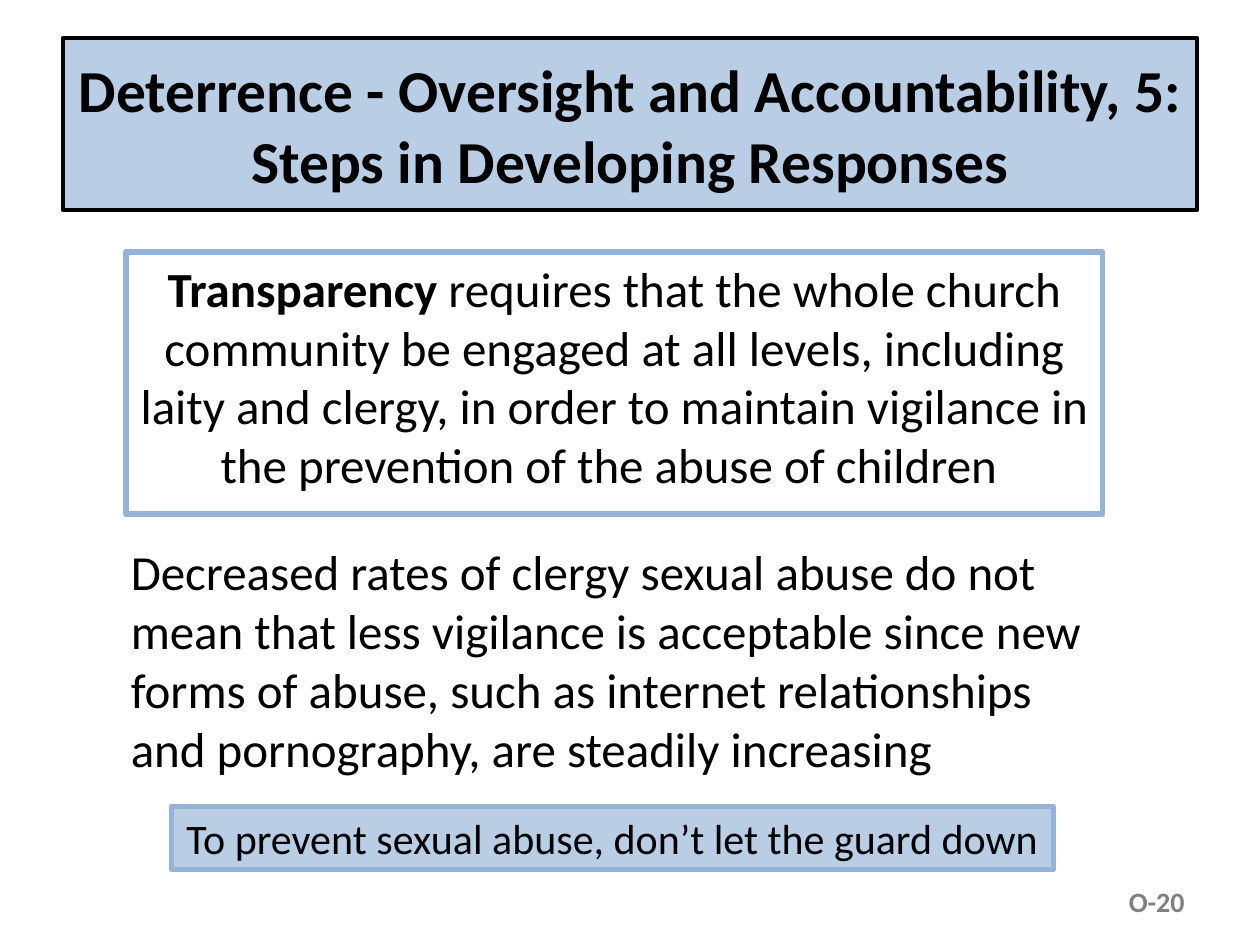
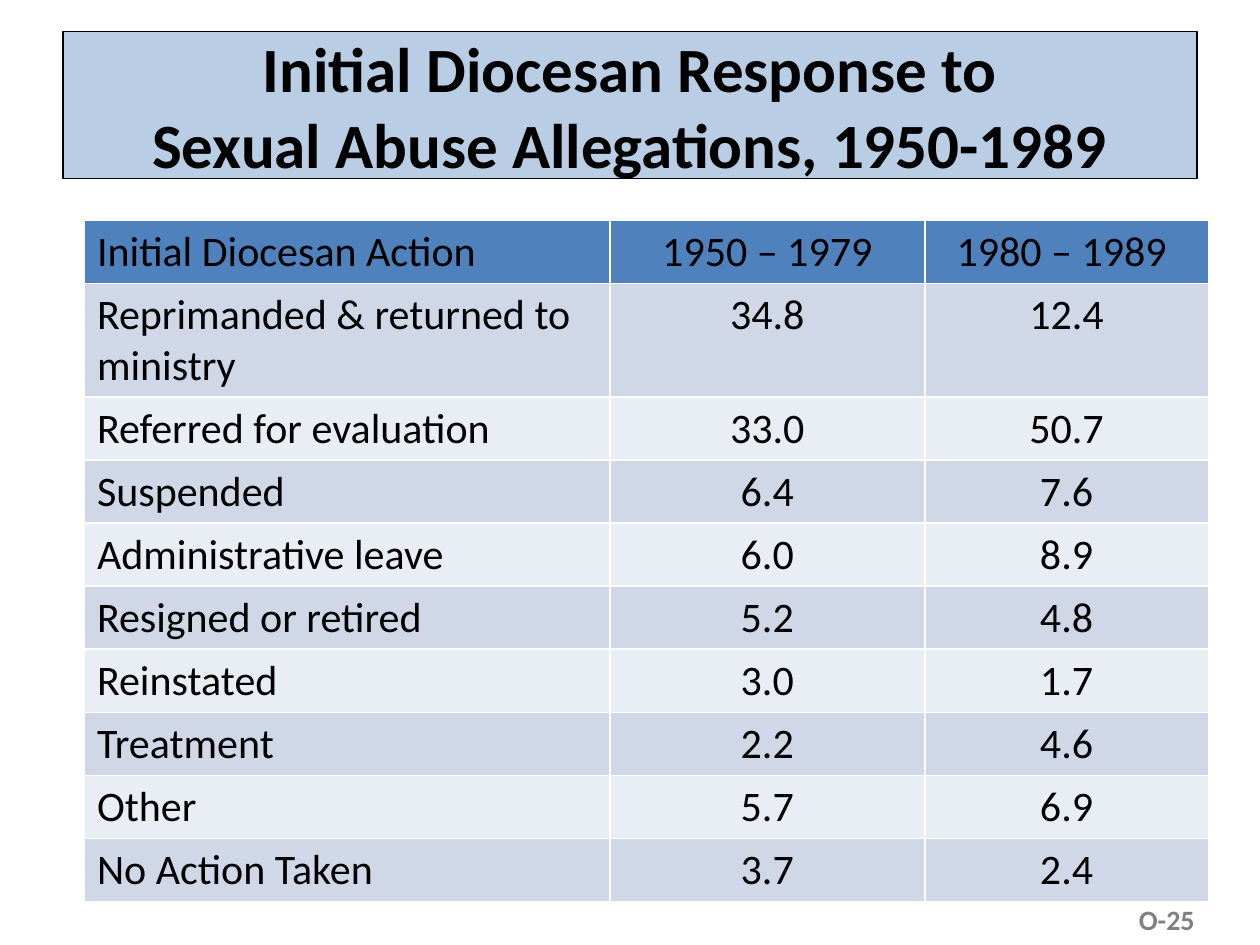
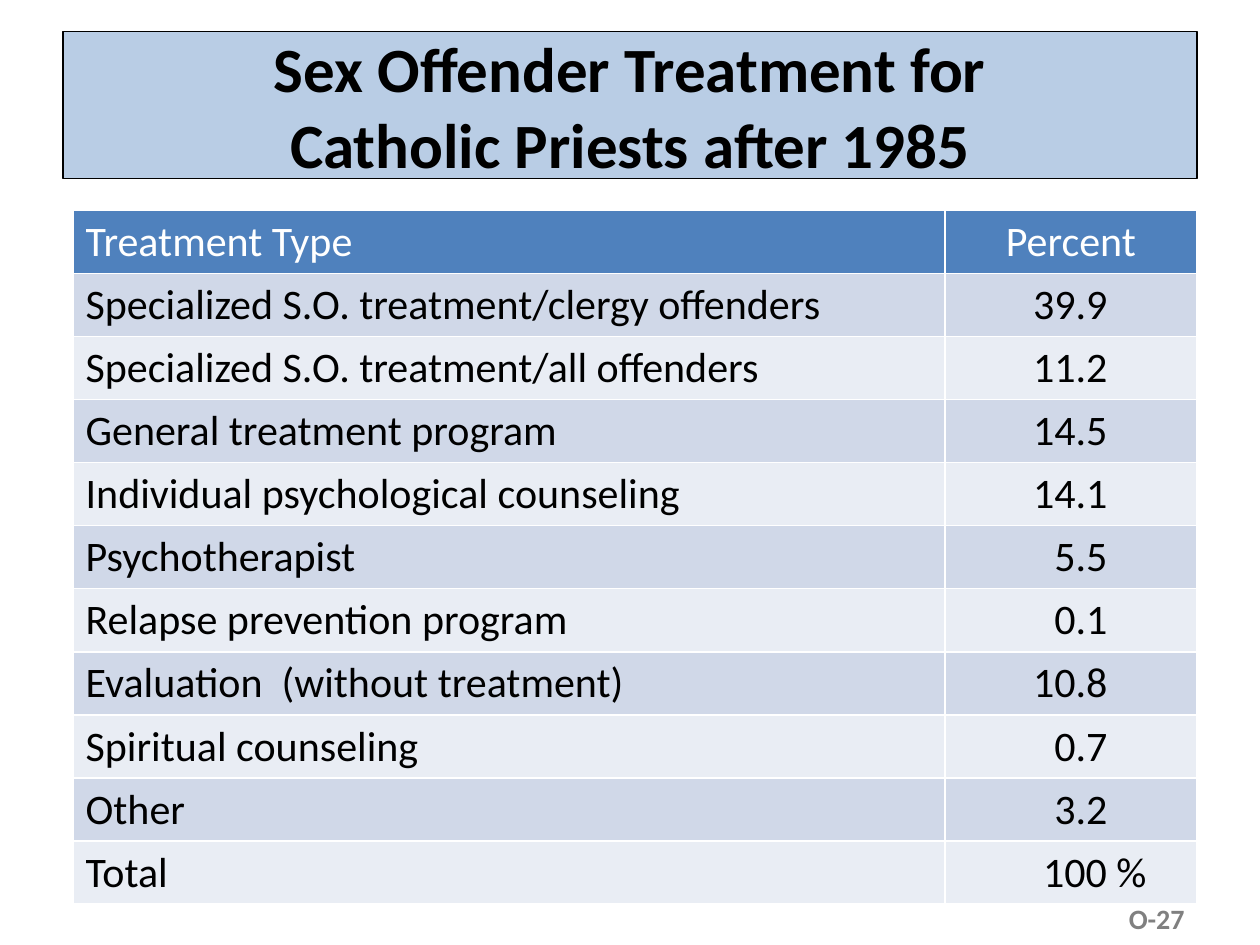
from lxml.etree import SubElement
from pptx import Presentation
from pptx.dml.color import RGBColor
from pptx.enum.shapes import MSO_SHAPE as Shape
from pptx.enum.text import MSO_ANCHOR as Anchor, PP_ALIGN as Align
from pptx.oxml.ns import qn
from pptx.util import Inches, Pt

FONT = "Calibri"
BLACK, WHITE, GREY = "000000", "FFFFFF", "808080"
PALE_BLUE, EDGE_BLUE, HEADER_BLUE = "B9CDE5", "95B3D7", "4F81BD"
ROW_BANDS = ("D0D8E8", "E9EDF4")
ROW_HEIGHT = 0.5

RESPONSES = [
    ("Initial Diocesan Action", "1950 – 1979", "1980 – 1989 "),
    ("Reprimanded & returned to ministry", "34.8", "12.4"),
    ("Referred for evaluation", "33.0", "50.7"),
    ("Suspended", "6.4", "7.6"),
    ("Administrative leave", "6.0", "8.9"),
    ("Resigned or retired", "5.2", "4.8"),
    ("Reinstated", "3.0", "1.7"),
    ("Treatment", "2.2", "4.6"),
    ("Other", "5.7", "6.9"),
    ("No Action Taken", "3.7", "2.4"),
]
TREATMENTS = [
    ("Treatment Type", "Percent"),
    ("Specialized S.O. treatment/clergy offenders", "39.9"),
    ("Specialized S.O. treatment/all offenders", "11.2"),
    ("General treatment program", "14.5"),
    ("Individual psychological counseling", "14.1"),
    ("Psychotherapist", "5.5"),
    ("Relapse prevention program", "0.1"),
    ("Evaluation  (without treatment)", "10.8"),
    ("Spiritual counseling", "0.7"),
    ("Other", "3.2"),
    ("Total", "100 %"),
]


def rgb(color):
    return RGBColor.from_string(color)


def write(frame, text, size=24, color=BLACK, bold=False, align=Align.LEFT, lead=""):
    """Fill a text frame; lead is a bold opening, a newline breaks the line."""
    para = frame.paragraphs[0]
    para.alignment = align
    for part, is_bold in ((lead, True), (text, bold)):
        for number, line in enumerate(part.split("\n") if part else []):
            if number:
                para.add_line_break()
            span = para.add_run()
            span.text = line
            span.font.name = FONT
            span.font.size = Pt(size)
            span.font.bold = is_bold
            span.font.color.rgb = rgb(color)


def add_text(page, at, text, anchor=Anchor.TOP, **style):
    box = page.shapes.add_textbox(*map(Inches, at))
    box.text_frame.word_wrap = True
    box.text_frame.vertical_anchor = anchor
    write(box.text_frame, text, **style)


def add_panel(page, at, text, fill=None, edge=EDGE_BLUE, weight=3,
              anchor=Anchor.TOP, **style):
    """Add a framed rectangle with centred text."""
    panel = page.shapes.add_shape(Shape.RECTANGLE, *map(Inches, at))
    panel.shadow.inherit = False
    if fill:
        panel.fill.solid()
        panel.fill.fore_color.rgb = rgb(fill)
    else:
        panel.fill.background()
    panel.line.color.rgb = rgb(edge)
    panel.line.width = Pt(weight)
    panel.text_frame.word_wrap = True
    panel.text_frame.vertical_anchor = anchor
    write(panel.text_frame, text, align=Align.CENTER, **style)


def add_title(page, text, top=0.25, height=1.17, size=36, weight=0.75):
    add_panel(page, (0.5, top, 9, height), text, fill=PALE_BLUE, edge=BLACK,
              weight=weight, anchor=Anchor.MIDDLE, size=size, bold=True)


def add_page_number(page, number, left=7.17, top=7.09):
    add_text(page, (left, top, 2.33, 0.4), number, anchor=Anchor.MIDDLE,
             size=16, color=GREY, bold=True, align=Align.RIGHT)


def set_borders(cell, color=WHITE, weight=1):
    properties = cell._tc.get_or_add_tcPr()
    for side in ("a:lnL", "a:lnR", "a:lnT", "a:lnB"):
        line = SubElement(properties, qn(side), w=str(Pt(weight)))
        SubElement(SubElement(line, qn("a:solidFill")), qn("a:srgbClr"), val=color)


def add_grid(page, left, top, widths, rows, header_color, number_margin=None):
    """Add a banded table; number_margin(text) right-aligns the numbers."""
    frame = page.shapes.add_table(len(rows), len(widths), Inches(left), Inches(top),
                                  Inches(sum(widths)), Inches(ROW_HEIGHT * len(rows)))
    table = frame.table
    for column, width in zip(table.columns, widths):
        column.width = Inches(width)
    for r, row in enumerate(rows):
        table.rows[r].height = Inches(ROW_HEIGHT)
        for c, text in enumerate(row):
            cell = table.cell(r, c)
            set_borders(cell)
            cell.fill.solid()
            cell.fill.fore_color.rgb = rgb(ROW_BANDS[(r - 1) % 2] if r else HEADER_BLUE)
            align = Align.CENTER if c else Align.LEFT
            if r and c and number_margin:
                align = Align.RIGHT
                cell.margin_right = Inches(number_margin(text))
            write(cell.text_frame, text, color=BLACK if r else header_color, align=align)


def percent_margin(text):
    """Give the percent sign room to stand right of the digits."""
    return 0.4 if text.endswith("%") else 0.71


def build_transparency(page):
    add_title(page, "Deterrence - Oversight and Accountability, 5:\n"
              "Steps in Developing Responses", top=0.3, height=1.37, size=34, weight=2.25)
    add_panel(page, (1, 2, 7.75, 2.08),
              " requires that the whole church community be engaged at all levels, "
              "including laity and clergy, in order to maintain vigilance in the "
              "prevention of the abuse of children ", lead="Transparency", size=28)
    add_page_number(page, "O-20", top=6.95)
    add_text(page, (0.94, 4.25, 7.83, 1.99),
             "Decreased rates of clergy sexual abuse do not mean that less vigilance "
             "is acceptable since new forms of abuse, such as internet relationships "
             "and pornography, are steadily increasing", size=28)
    add_panel(page, (1.36, 6.4, 7, 0.5),
              "To prevent sexual abuse, don’t let the guard down", fill=PALE_BLUE)


def build_responses(page):
    add_title(page, "Initial Diocesan Response to\nSexual Abuse Allegations, 1950-1989")
    add_grid(page, 0.67, 1.75, (4.17, 2.5, 2.25), RESPONSES, BLACK)
    add_page_number(page, "O-25", left=7.25, top=7.1)


def build_treatments(page):
    add_title(page, "Sex Offender Treatment for\nCatholic Priests after 1985")
    add_grid(page, 0.58, 1.67, (6.92, 2), TREATMENTS, WHITE, percent_margin)
    add_page_number(page, "O-27")


def main():
    deck = Presentation()
    deck.slide_width, deck.slide_height = Inches(10), Inches(7.5)
    blank = deck.slide_layouts[6]
    for build in (build_transparency, build_responses, build_treatments):
        build(deck.slides.add_slide(blank))
    deck.save("out.pptx")


if __name__ == "__main__":
    main()
